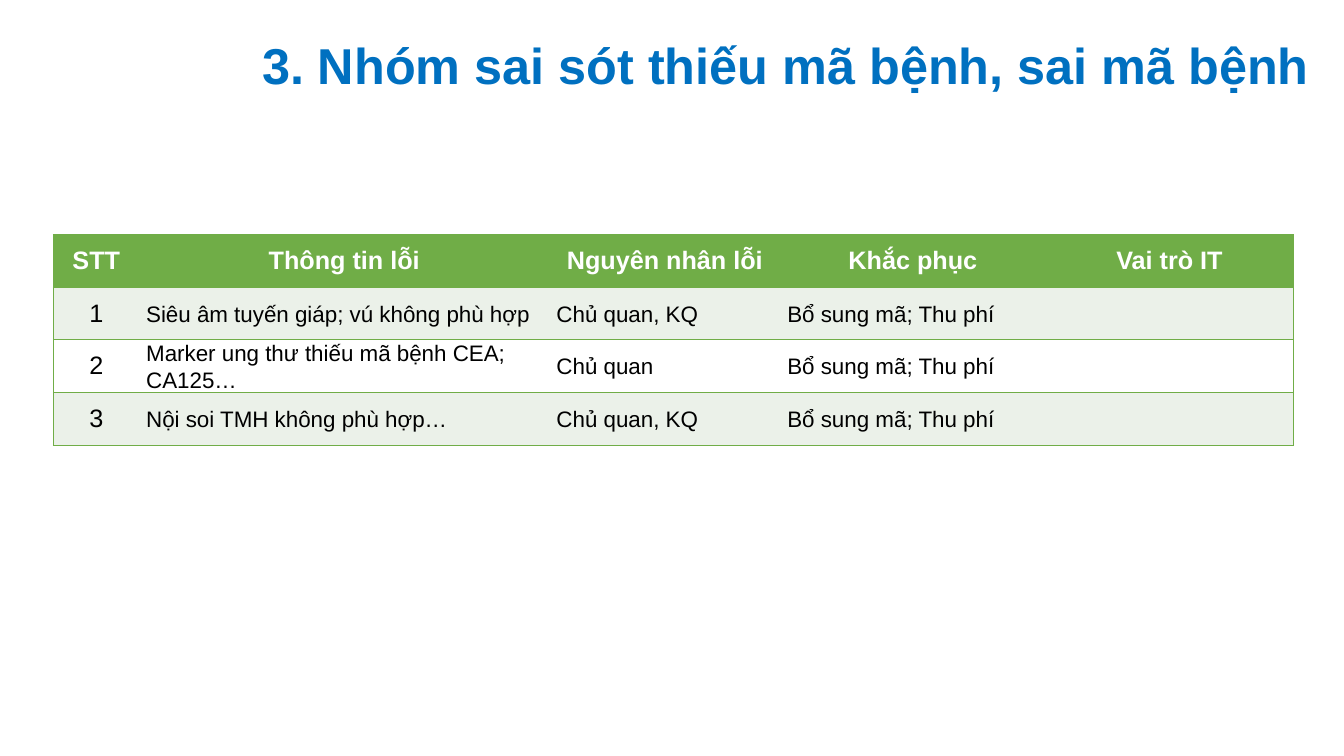
import pptx
import pptx.util
import pptx.dml.color
import pptx.enum.text
import pptx.oxml
import pptx.oxml.ns

TITLE = "3. Nhóm sai sót thiếu mã bệnh, sai mã bệnh"
ROWS = [
    ("STT", "Thông tin lỗi", "Nguyên nhân lỗi", "Khắc phục", "Vai trò IT"),
    ("1", "Siêu âm tuyến giáp; vú không phù hợp", "Chủ quan, KQ", "Bổ sung mã; Thu phí", ""),
    ("2", "Marker ung thư thiếu mã bệnh CEA; CA125…", "Chủ quan", "Bổ sung mã; Thu phí", ""),
    ("3", "Nội soi TMH không phù hợp…", "Chủ quan, KQ", "Bổ sung mã; Thu phí", ""),
]
COLUMN_WIDTHS = (0.85, 4.07, 2.29, 2.63, 2.46)
ROW_HEIGHT = 0.52
GREEN, BAND, WHITE, BLACK, BLUE = "70AD47", "EBF1E9", "FFFFFF", "000000", "0070C0"
NO_STYLE = "{2D5ABB26-0587-4C30-8999-92F81FD0307C}"

inch = pptx.util.Inches
align = pptx.enum.text.PP_ALIGN
middle = pptx.enum.text.MSO_ANCHOR.MIDDLE


def colour(value):
    return pptx.dml.color.RGBColor.from_string(value)


def style_text(para, size, tone, bold, alignment):
    para.alignment = alignment
    for span in para.runs:
        span.font.name = "Arial"
        span.font.size = pptx.util.Pt(size)
        span.font.bold = bold
        span.font.color.rgb = colour(tone)


def add_borders(cell, sides):
    properties = cell._tc.get_or_add_tcPr()
    for position, side in enumerate(sides):
        properties.insert(position, pptx.oxml.parse_xml(
            f'<a:ln{side} {pptx.oxml.ns.nsdecls("a")} w="{pptx.util.Pt(1)}">'
            f'<a:solidFill><a:srgbClr val="{GREEN}"/></a:solidFill></a:ln{side}>'))


def fill_cell(cell, text, row, column):
    header = row == 0
    detail = not header and column > 0
    cell.fill.solid()
    cell.fill.fore_color.rgb = colour(GREEN if header else BAND if row % 2 else WHITE)
    cell.vertical_anchor = middle
    cell.text_frame.text = text
    para = cell.text_frame.paragraphs[0]
    style_text(para, 16 if detail else 18, WHITE if header else BLACK, header,
               align.LEFT if detail else align.CENTER)
    if detail and text:
        cell.margin_left = cell.margin_right = inch(0.07)
        cell.margin_top = cell.margin_bottom = 0
        para.line_spacing = 1.07
    outer = "L" if column == 0 else "R" if column == len(COLUMN_WIDTHS) - 1 else ""
    add_borders(cell, outer + "TB")


def main():
    deck = pptx.Presentation()
    deck.slide_width, deck.slide_height = inch(13.33), inch(7.5)
    page = deck.slides.add_slide(deck.slide_layouts[5])

    title = page.shapes.title
    title.left, title.top, title.width, title.height = map(inch, (2.21, 0.21, 10.88, 0.85))
    title.text_frame.text = TITLE
    title.text_frame.vertical_anchor = middle
    style_text(title.text_frame.paragraphs[0], 36, BLUE, True, align.RIGHT)

    frame = page.shapes.add_table(
        len(ROWS), len(COLUMN_WIDTHS), inch(0.53), inch(2.33),
        inch(sum(COLUMN_WIDTHS)), inch(ROW_HEIGHT * len(ROWS)))
    table = frame.table
    table._tbl.tblPr.find(pptx.oxml.ns.qn("a:tableStyleId")).text = NO_STYLE
    for column, width in zip(table.columns, COLUMN_WIDTHS):
        column.width = inch(width)
    for row, texts in enumerate(ROWS):
        table.rows[row].height = inch(ROW_HEIGHT)
        for column, text in enumerate(texts):
            fill_cell(table.cell(row, column), text, row, column)

    deck.save("out.pptx")


if __name__ == "__main__":
    main()
